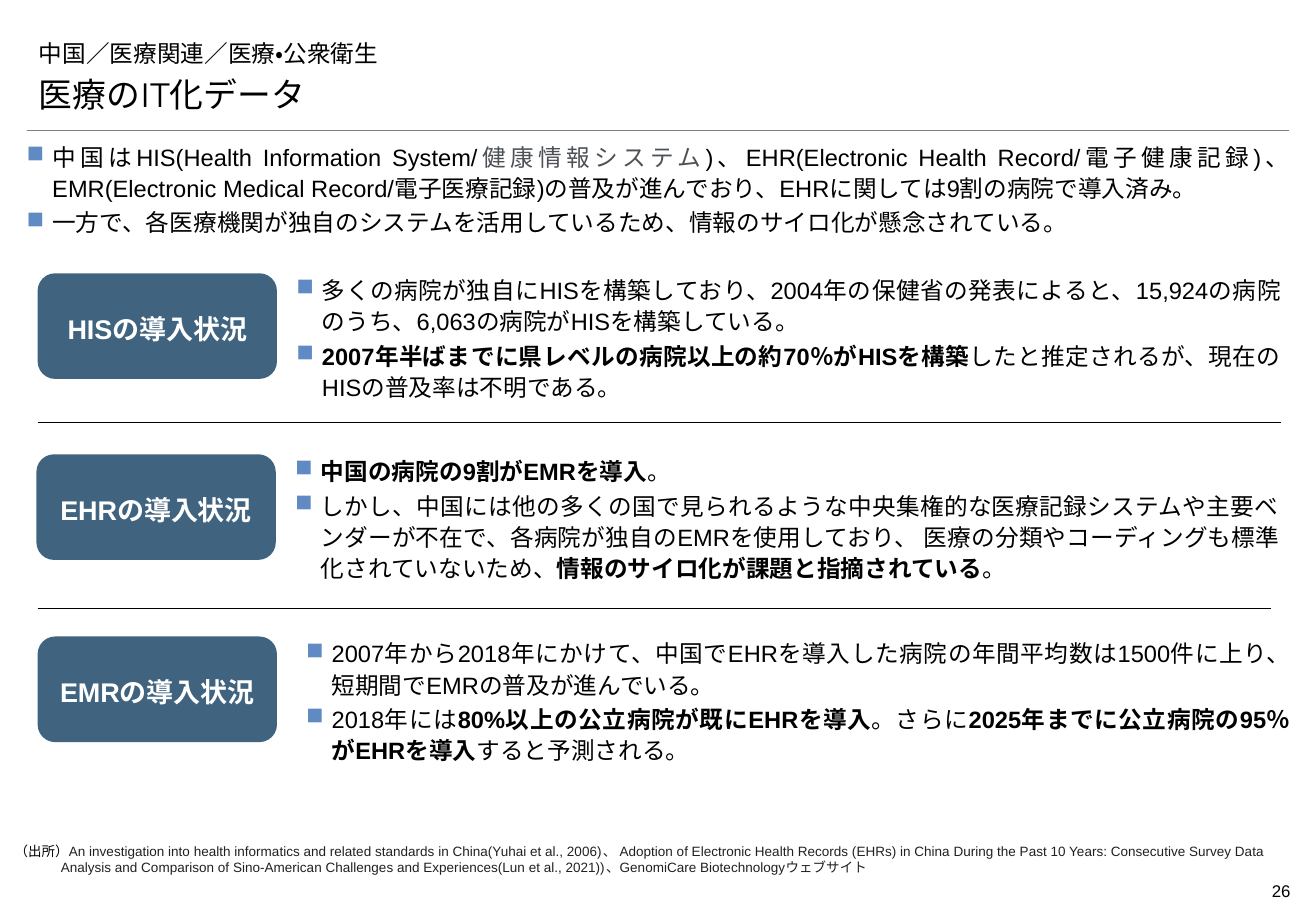
from lxml import etree
from pptx import Presentation
from pptx.dml.color import RGBColor
from pptx.enum.lang import MSO_LANGUAGE_ID
from pptx.enum.shapes import MSO_CONNECTOR, MSO_SHAPE
from pptx.enum.text import MSO_ANCHOR, PP_ALIGN
from pptx.oxml.ns import qn
from pptx.util import Inches, Pt

STRAIGHT = MSO_CONNECTOR.STRAIGHT
ROUNDED = MSO_SHAPE.ROUNDED_RECTANGLE
BOTTOM, MIDDLE, TOP = MSO_ANCHOR.BOTTOM, MSO_ANCHOR.MIDDLE, MSO_ANCHOR.TOP
LEFT, CENTER, RIGHT, JUSTIFY = PP_ALIGN.LEFT, PP_ALIGN.CENTER, PP_ALIGN.RIGHT, PP_ALIGN.JUSTIFY
JAPANESE = MSO_LANGUAGE_ID.JAPANESE

THEME = {
    "body_font": "Arial", "title_font": "Montserrat",
    "black": RGBColor.from_string("000000"),
    "white": RGBColor.from_string("FFFFFF"),
    "gray": RGBColor.from_string("4D5156"),
    "source": RGBColor.from_string("202122"),
    "rule": RGBColor.from_string("7F7F7F"),
    "label": RGBColor.from_string("40647F"),
    "bullet": "5F8AC3",
    "section_size": Pt(14), "title_size": Pt(20), "body_size": Pt(14),
    "label_size": Pt(16), "source_size": Pt(8), "number_size": Pt(10),
}
BOLD = {"bold": True}
BULLETED = {"alignment": JUSTIFY, "line_spacing": 1.1, "space_after": Pt(2)}
LABELLED = {"alignment": CENTER, "line_spacing": 1.14, "space_after": Pt(4)}
NO_MARGINS = (0, 0, 0, 0)

presentation = Presentation()
presentation.slide_width = Inches(10.83)
presentation.slide_height = Inches(7.5)
slide = presentation.slides.add_slide(presentation.slide_layouts[6])


def fill_text(shape, paragraphs, size, layout, anchor=TOP, margins=(0.1, 0.05, 0.1, 0.05),
              hanging=0, bulleted=False, **font_format):
    """Write paragraphs given as lists of (text, run format) pairs into a shape."""
    frame = shape.text_frame
    frame.word_wrap = True
    frame.vertical_anchor = anchor
    for side, margin in zip(("left", "top", "right", "bottom"), margins):
        setattr(frame, f"margin_{side}", Inches(margin))
    for index, runs in enumerate(paragraphs):
        paragraph = frame.add_paragraph() if index else frame.paragraphs[0]
        properties = paragraph._p.get_or_add_pPr()
        if hanging:
            properties.set("marL", str(Inches(hanging)))
            properties.set("indent", str(-Inches(hanging)))
        if bulleted:
            color = etree.SubElement(properties, qn("a:buClr"))
            etree.SubElement(color, qn("a:srgbClr"), val=THEME["bullet"])
            etree.SubElement(properties, qn("a:buChar"), char="■")
        for name, value in layout.items():
            setattr(paragraph, name, value)
        for text, run_format in runs:
            run = paragraph.add_run()
            run.text = text
            values = {"name": THEME["body_font"], "size": size, "bold": False,
                      "language_id": JAPANESE, "color": THEME["black"],
                      **font_format, **run_format}
            run.font.color.rgb = values.pop("color")
            for name, value in values.items():
                setattr(run.font, name, value)


def add_rule(left, right, y, color, width):
    rule = slide.shapes.add_connector(STRAIGHT, Inches(left), Inches(y), Inches(right), Inches(y))
    rule.line.color.rgb = color
    rule.line.width = Pt(width)
    etree.SubElement(rule._element.spPr, qn("a:effectLst"))


# Header
add_rule(0.22, 10.61, 1.07, THEME["rule"], 0.25)
for text, top, size in (
    ("中国／医療関連／医療・公衆衛生", 0.21, THEME["section_size"]),
    ("医療のIT化データ", 0.6, THEME["title_size"]),
):
    heading = slide.shapes.add_textbox(Inches(0.22), Inches(top), Inches(10.39), Inches(0.39))
    fill_text(heading, [[(text, {})]], size, {"alignment": LEFT}, BOTTOM, name=THEME["title_font"])

# Bulleted texts: left, top, width, height, paragraphs
summary = (0.22, 1.15, 10.39, 0.79, [
    [("中国はHIS(Health Information System/", {}),
     ("健康情報システム", {"color": THEME["gray"]}),
     (")、EHR(Electronic Health Record/電子健康記録)、EMR(Electronic Medical Record/電子医療記録)"
      "の普及が進んでおり、EHRに関しては9割の病院で導入済み。", {})],
    [("一方で、各医療機関が独自のシステムを活用しているため、情報のサイロ化が懸念されている。", {})],
])
his_status = (2.44, 2.25, 8.1, 1.07, [
    [("多くの病院が独自にHISを構築しており、2004年の保健省の発表によると、15,924の病院のうち、"
      "6,063の病院がHISを構築している。", {})],
    [("2007年半ばまでに県レベルの病院以上の約70％がHISを構築", BOLD),
     ("したと推定されるが、現在のHISの普及率は不明である。", {})],
])
ehr_status = (2.43, 3.74, 8.1, 1.04, [
    [("中国の病院の9割がEMRを導入", BOLD), ("。", {})],
    [("しかし、中国には他の多くの国で見られるような中央集権的な医療記録システムや主要ベンダーが不在で、"
      "各病院が独自のEMRを使用しており、 医療の分類やコーディングも標準化されていないため、", {}),
     ("情報のサイロ化が課題と指摘されている", BOLD), ("。", {})],
])
emr_status = (2.52, 5.24, 8.1, 1.04, [
    [("2007年から2018年にかけて、中国でEHRを導入した病院の年間平均数は1500件に上り、"
      "短期間でEMRの普及が進んでいる。", {})],
    [("2018年には", {}), ("80%以上の公立病院が既にEHRを導入", BOLD), ("。さらに", {}),
     ("2025年までに公立病院の95％がEHRを導入", BOLD), ("すると予測される。", {})],
])
for left, top, width, height, paragraphs in (summary, his_status, ehr_status, emr_status):
    box = slide.shapes.add_textbox(Inches(left), Inches(top), Inches(width), Inches(height))
    fill_text(box, paragraphs, THEME["body_size"], BULLETED, margins=NO_MARGINS,
              hanging=0.21, bulleted=True)

# Row labels and the rules between rows
for system, left, top in (("HIS", 0.31, 2.25), ("EHR", 0.3, 3.74), ("EMR", 0.31, 5.24)):
    label = slide.shapes.add_shape(ROUNDED, Inches(left), Inches(top), Inches(1.97), Inches(0.87))
    label.shadow.inherit = False
    label.fill.solid()
    label.fill.fore_color.rgb = THEME["label"]
    label.line.fill.background()
    fill_text(label, [[(f"{system}の導入状況", {})]], THEME["label_size"], LABELLED, MIDDLE,
              color=THEME["white"], bold=True)
for right, y in ((10.54, 3.48), (10.46, 5.01)):
    add_rule(0.31, right, y, THEME["black"], 0.75)

# Footer
source = slide.shapes.add_textbox(Inches(0.12), Inches(6.94), Inches(10.32), Inches(0.27))
fill_text(source, [[
    ("（出所）", {}),
    ("An investigation into health informatics and related standards in China(Yuhai et al., 2006)、 "
     "Adoption of Electronic Health Records (EHRs) in China During the Past 10 Years: "
     "Consecutive Survey Data Analysis and Comparison of Sino-American Challenges and "
     "Experiences(Lun et al., 2021))、GenomiCare Biotechnologyウェブサイト",
     {"color": THEME["source"]}),
]], THEME["source_size"], {"alignment": LEFT}, margins=NO_MARGINS, hanging=0.38)
page_number = slide.shapes.add_textbox(Inches(9.83), Inches(7.2), Inches(0.79), Inches(0.27))
fill_text(page_number, [[("26", {})]], THEME["number_size"], {"alignment": RIGHT},
          margins=(0, 0.05, 0, 0.05))

presentation.save("out.pptx")
